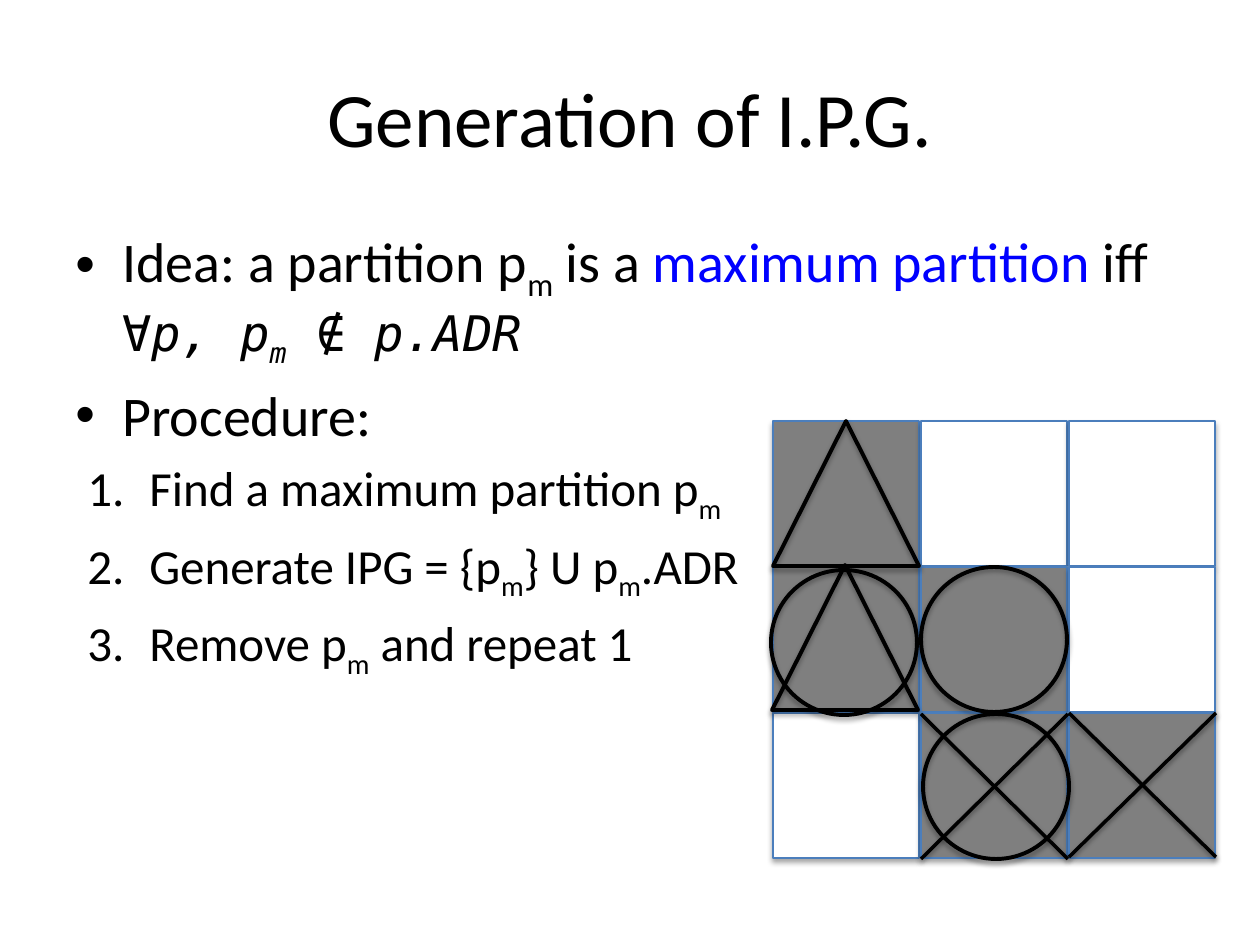
from typing import NamedTuple, Optional

from lxml import etree
from pptx import Presentation
from pptx.dml.color import RGBColor
from pptx.enum.shapes import MSO_CONNECTOR, MSO_SHAPE
from pptx.enum.text import MSO_ANCHOR, PP_ALIGN
from pptx.oxml.ns import qn
from pptx.util import Emu, Pt

RECT = MSO_SHAPE.RECTANGLE
OVAL = MSO_SHAPE.OVAL
TRI = MSO_SHAPE.ISOSCELES_TRIANGLE
LINE = MSO_CONNECTOR.STRAIGHT
TOP, MIDDLE = MSO_ANCHOR.TOP, MSO_ANCHOR.MIDDLE
LEFT, CENTER = PP_ALIGN.LEFT, PP_ALIGN.CENTER

BLACK = RGBColor(0x00, 0x00, 0x00)
WHITE = RGBColor(0xFF, 0xFF, 0xFF)
GRAY = RGBColor(0x7F, 0x7F, 0x7F)
EDGE = RGBColor(0x4B, 0x7E, 0xBC)
BLUE = RGBColor(0x00, 0x00, 0xFF)

SANS, MONO = "Calibri", "DejaVu Sans Mono"
CELL_W, CELL_H = 146, 145
GRID_X, GRID_Y = 773, 421
STEP_X, STEP_Y = 148, 146
FILLED = ("100", "110", "011")


class Span(NamedTuple):
    text: str
    size: int = 28
    color: RGBColor = BLACK
    font: str = SANS
    slant: bool = False
    sub: bool = False


class Item(NamedTuple):
    spans: list[Span]
    left: int = 0
    hang: int = 0
    mark: Optional[tuple[str, str, str]] = None
    align: PP_ALIGN = LEFT


class Mark(NamedTuple):
    kind: MSO_SHAPE
    x: int
    y: int


class Cross(NamedTuple):
    x: int
    y: int
    w: int
    h: int


DOT = ("a:buChar", "char", "•")
NUM = ("a:buAutoNum", "type", "arabicPeriod")


def px(n: int) -> Emu:
    return Emu(round(n * 914400 / 126))


def shade(shape, alpha: int, dist: float) -> None:
    effects = etree.SubElement(shape._element.spPr, qn("a:effectLst"))
    outer = etree.SubElement(
        effects, qn("a:outerShdw"), blurRad=str(Pt(3.1)), dist=str(Pt(dist)),
        dir="5400000", rotWithShape="0")
    color = etree.SubElement(outer, qn("a:srgbClr"), val=str(BLACK))
    etree.SubElement(color, qn("a:alpha"), val=str(alpha * 1000))


def add_span(para, span: Span) -> None:
    run = para.add_run()
    run.text = span.text
    font = run.font
    font.name, font.size = span.font, Pt(span.size)
    font.italic = span.slant
    font.color.rgb = span.color
    if span.sub:
        run._r.get_or_add_rPr().set("baseline", "-25000")


def add_text(slide, x: int, y: int, w: int, h: int,
             items: list[Item], anchor: MSO_ANCHOR) -> None:
    frame = slide.shapes.add_textbox(px(x), px(y), px(w), px(h)).text_frame
    frame.word_wrap = True
    frame.vertical_anchor = anchor
    for i, item in enumerate(items):
        para = frame.add_paragraph() if i else frame.paragraphs[0]
        para.alignment = item.align
        if item.mark:
            tag, key, value = item.mark
            props = para._p.get_or_add_pPr()
            props.set("marL", str(px(item.left)))
            props.set("indent", str(px(-item.hang)))
            if item.mark == DOT:
                etree.SubElement(props, qn("a:buFont"), typeface="Arial")
            etree.SubElement(props, qn(tag)).set(key, value)
        if i:
            para.space_before = Pt(6)
        for span in item.spans:
            add_span(para, span)


def add_form(slide, mark: Mark, fill: Optional[RGBColor],
             edge: RGBColor, width: float) -> None:
    shape = slide.shapes.add_shape(
        mark.kind, px(mark.x), px(mark.y), px(CELL_W), px(CELL_H))
    if fill is None:
        shape.fill.background()
    else:
        shape.fill.solid()
        shape.fill.fore_color.rgb = fill
    shape.line.color.rgb = edge
    shape.line.width = Pt(width)
    shade(shape, 35, 1.8)


def add_cross(slide, cross: Cross) -> None:
    x, y, w, h = cross
    for start, end in ((x, x + w), (x + w, x)):
        line = slide.shapes.add_connector(
            LINE, px(start), px(y), px(end), px(y + h))
        line.line.color.rgb = BLACK
        line.line.width = Pt(2)
        shade(line, 38, 1.6)


def step(*spans: Span) -> Item:
    return Item(list(spans), 74, 62, NUM)


def main() -> None:
    deck = Presentation()
    deck.slide_width, deck.slide_height = px(1260), px(945)
    slide = deck.slides.add_slide(deck.slide_layouts[6])

    title = Item([Span("Generation of I.P.G.", 44)], align=CENTER)
    add_text(slide, 63, 38, 1134, 157, [title], MIDDLE)

    sub = Span("m", sub=True)
    body = [
        Item([
            Span("Idea: a partition p", 32),
            Span("m", 32, sub=True),
            Span(" is a ", 32),
            Span("maximum partition ", 32, BLUE),
            Span("iff ", 32),
            Span("∀p, p", font=MONO, slant=True),
            Span("m", font=MONO, slant=True, sub=True),
            Span(" ∉ p.ADR", font=MONO, slant=True),
        ], 47, 47, DOT),
        Item([Span("Procedure:", 32)], 47, 47, DOT),
        step(Span("Find a maximum partition p"), sub),
        step(Span("Generate IPG = {p"), sub, Span("} U p"), sub, Span(".ADR")),
        step(Span("Remove p"), sub, Span(" and repeat 1")),
    ]
    add_text(slide, 63, 220, 1134, 624, body, TOP)

    for row, flags in enumerate(FILLED):
        for col, flag in enumerate(flags):
            cell = Mark(RECT, GRID_X + col * STEP_X, GRID_Y + row * STEP_Y)
            add_form(slide, cell, GRAY if flag == "1" else WHITE, EDGE, 0.75)

    for cross in (Cross(1069, 713, 147, 144), Cross(921, 714, 147, 145)):
        add_cross(slide, cross)

    marks = (
        Mark(OVAL, 921, 567),
        Mark(OVAL, 923, 714),
        Mark(OVAL, 771, 570),
        Mark(TRI, 773, 421),
        Mark(TRI, 772, 565),
    )
    for mark in marks:
        add_form(slide, mark, None, BLACK, 2.25)

    deck.save("out.pptx")


if __name__ == "__main__":
    main()
